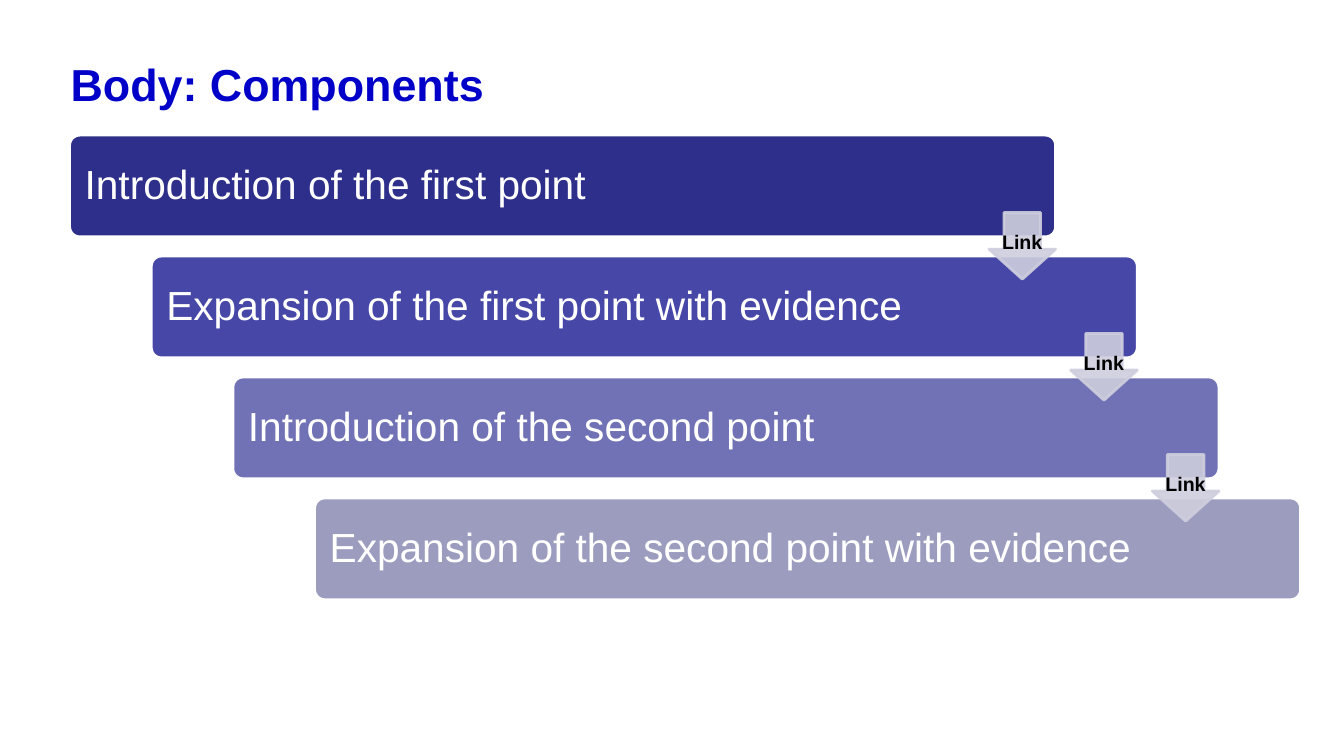
from dataclasses import dataclass

from lxml.etree import SubElement
from pptx import Presentation
from pptx.dml.color import RGBColor
from pptx.enum.shapes import MSO_SHAPE
from pptx.enum.text import MSO_ANCHOR, MSO_AUTO_SIZE, PP_ALIGN
from pptx.oxml.ns import qn
from pptx.shapes.autoshape import Shape
from pptx.slide import Slide
from pptx.text.text import TextFrame
from pptx.util import Inches, Pt

COLORS = {
    "title": "0000C8",
    "navy": "2E2E8B",
    "indigo": "4747A8",
    "violet": "7171B5",
    "mist": "9C9CBF",
    "arrow": "CECEDE",
    "white": "FFFFFF",
    "black": "000000",
}
FONT = "Arial"
LEFT, TOP = 0.69, 1.34
COL, ROW = 0.81, 1.2
BAR_W, BAR_H = 9.78, 1.01
ARROW = 0.66
ARROW_DX, ARROW_DY = BAR_W - ARROW, 0.77
LINK_DX, LINK_DY = ARROW_DX + 0.03, 0.89


@dataclass(frozen=True)
class Step:
    index: int
    text: str
    color: str

    @property
    def left(self) -> float:
        return LEFT + self.index * COL

    @property
    def top(self) -> float:
        return TOP + self.index * ROW


STEPS = [
    Step(0, "Introduction of the first point", "navy"),
    Step(1, "Expansion of the first point with evidence", "indigo"),
    Step(2, "Introduction of the second point", "violet"),
    Step(3, "Expansion of the second point with evidence", "mist"),
]


def rgb(name: str) -> RGBColor:
    return RGBColor.from_string(COLORS[name])


def add_text(tf: TextFrame, text: str, size: int, color: str, bold: bool = False) -> None:
    p = tf.paragraphs[0]
    p.alignment = PP_ALIGN.LEFT
    r = p.add_run()
    r.text = text
    r.font.name = FONT
    r.font.size = Pt(size)
    r.font.bold = bold
    r.font.color.rgb = rgb(color)


def style(sp: Shape, fill: str, line: str) -> None:
    sp.shadow.inherit = False
    sp.fill.solid()
    sp.fill.fore_color.rgb = rgb(fill)
    sp.line.color.rgb = rgb(line)
    sp.line.width = Pt(2)


def add_title(s: Slide) -> None:
    sp = s.shapes.title
    sp.left, sp.top = Inches(0.6), Inches(0.47)
    sp.width, sp.height = Inches(12.04), Inches(0.71)
    tf = sp.text_frame
    tf.auto_size = MSO_AUTO_SIZE.NONE
    tf.vertical_anchor = MSO_ANCHOR.MIDDLE
    add_text(tf, "Body: Components", 32, "title", True)


def add_bar(s: Slide, step: Step) -> None:
    sp = s.shapes.add_shape(MSO_SHAPE.ROUNDED_RECTANGLE, Inches(step.left),
                            Inches(step.top), Inches(BAR_W), Inches(BAR_H))
    sp.adjustments[0] = 0.1
    style(sp, step.color, "white")
    tf = sp.text_frame
    tf.word_wrap = True
    tf.vertical_anchor = MSO_ANCHOR.MIDDLE
    tf.margin_left = tf.margin_right = Inches(0.12)
    tf.margin_top = tf.margin_bottom = Inches(0.12)
    tf.paragraphs[0].line_spacing = 0.9
    add_text(tf, step.text, 29, "white")


def add_arrow(s: Slide, step: Step) -> None:
    sp = s.shapes.add_shape(MSO_SHAPE.DOWN_ARROW, Inches(step.left + ARROW_DX),
                            Inches(step.top + ARROW_DY), Inches(ARROW), Inches(ARROW))
    sp.adjustments[0] = 0.55
    sp.adjustments[1] = 0.45
    style(sp, "arrow", "arrow")
    for color in sp.element.spPr.iter(qn("a:srgbClr")):
        SubElement(color, qn("a:alpha"), val="90000")


def add_link(s: Slide, step: Step) -> None:
    sp = s.shapes.add_textbox(Inches(step.left + LINK_DX), Inches(step.top + LINK_DY),
                              Inches(0.79), Inches(0.34))
    tf = sp.text_frame
    tf.word_wrap = True
    tf.auto_size = MSO_AUTO_SIZE.SHAPE_TO_FIT_TEXT
    add_text(tf, "Link", 14, "black", True)


def main() -> None:
    prs = Presentation()
    prs.slide_width, prs.slide_height = Inches(13.33), Inches(7.5)
    s = prs.slides.add_slide(prs.slide_layouts[5])
    add_title(s)
    for step in STEPS:
        add_bar(s, step)
    for step in STEPS[:-1]:
        add_arrow(s, step)
        add_link(s, step)
    prs.save("out.pptx")


if __name__ == "__main__":
    main()
